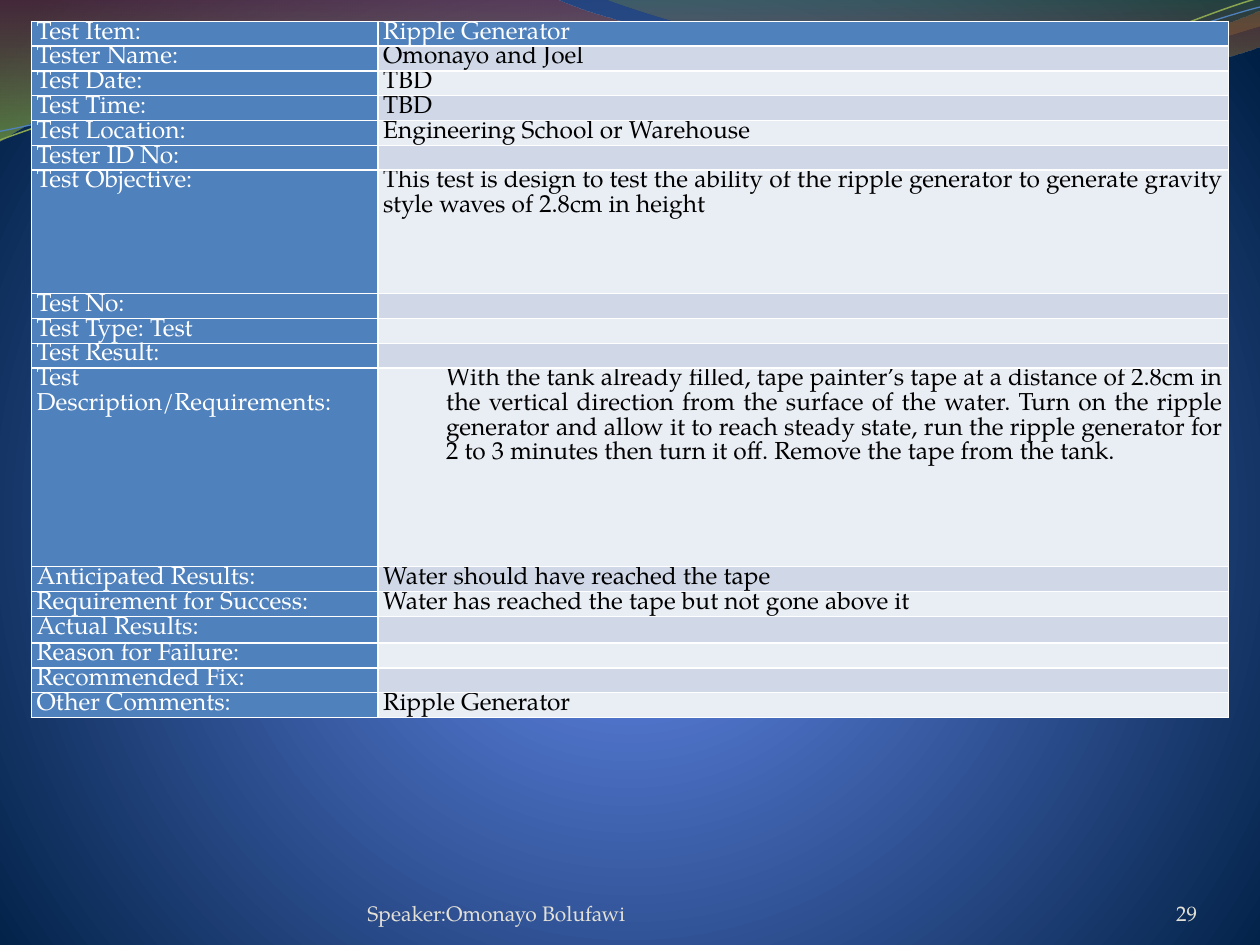
from dataclasses import dataclass

from lxml import etree
from pptx import Presentation
from pptx import util as u
from pptx.dml.color import RGBColor
from pptx.enum import text
from pptx.oxml import ns

Pt = u.Pt
ALIGN, ANCHOR = text.PP_ALIGN, text.MSO_ANCHOR


@dataclass(frozen=True)
class Theme:
    font: str = "TeX Gyre Pagella"
    table_size: float = 14
    blank_size: float = 10
    footer_size: float = 12
    line_pitch: float = 14.1
    label: str = "4F81BD"
    bands: tuple = ("E9EDF4", "D0D8E8")
    white: str = "FFFFFF"
    ink: str = "000000"
    footer: str = "E3E1D7"
    green_line: str = "89A54F"
    backdrop: tuple = ((0, "4D75D6", 100), (25, "4E72C7", 100), (100, "001F44", 100))
    back_wave: tuple = ((0, "973330", 45), (100, "95C238", 55))
    front_wave: tuple = ((0, "769537", 30), (80, "BE3330", 45))


def add_node(parent, tag, **attributes):
    node = etree.SubElement(parent, ns.qn(tag))
    for key, value in attributes.items():
        node.set(key, str(value))
    return node


def make_gradient(parent, stops, circle=None):
    """Swap the solid fill in parent for a vertical or circular gradient."""
    solid = parent.find(ns.qn("a:solidFill"))
    gradient = add_node(parent, "a:gradFill", rotWithShape=1)
    stop_list = add_node(gradient, "a:gsLst")
    for position, color, opacity in stops:
        stop = add_node(stop_list, "a:gs", pos=position * 1000)
        add_node(add_node(stop, "a:srgbClr", val=color), "a:alpha", val=opacity * 1000)
    if circle:
        center = add_node(gradient, "a:path", path="circle")
        add_node(center, "a:fillToRect",
                 **{side: percent * 1000 for side, percent in zip("ltrb", circle)})
    else:
        add_node(gradient, "a:lin", ang=5400000, scaled=0)
    parent.replace(solid, gradient)


def bend(shape, segments):
    """Merge the three straight steps of each six-number segment into one cubic curve."""
    steps = iter(list(shape._element.iter(ns.qn("a:lnTo"))))
    for segment in segments:
        group = [next(steps) for _ in range(len(segment) // 2)]
        if len(group) == 3:
            outline = group[0].getparent()
            curve = add_node(outline, "a:cubicBezTo")
            outline.replace(group[0], curve)
            for step in group:
                curve.append(step[0])
            for step in group[1:]:
                outline.remove(step)


def write(paragraph, words, *, size, color, font, align=ALIGN.LEFT, pitch=None, indent=0):
    paragraph.alignment = align
    if pitch:
        paragraph.line_spacing = Pt(pitch)
    if indent:
        paragraph._p.get_or_add_pPr().set("marL", str(Pt(indent)))
    run = paragraph.add_run()
    run.text = words
    run.font.size, run.font.name = Pt(size), font
    run.font.color.rgb = RGBColor.from_string(color)


class SlideBuilder:
    def __init__(self, slide, theme):
        self.slide, self.theme = slide, theme

    def background(self):
        self.slide.background.fill.solid()
        holder = self.slide._element.find(".//" + ns.qn("p:bgPr"))
        make_gradient(holder, self.theme.backdrop, circle=(10, 110, 10, 100))

    def wave(self, start, segments, stops=None, line=None, width=0.75):
        """Outline of lines (x, y) and cubic curves (three x, y pairs)."""
        points = [(Pt(segment[i]), Pt(segment[i + 1]))
                  for segment in segments for i in range(0, len(segment), 2)]
        builder = self.slide.shapes.build_freeform(Pt(start[0]), Pt(start[1]))
        builder.add_line_segments(points, close=bool(stops))
        shape = builder.convert_to_shape()
        bend(shape, segments)
        shape.shadow.inherit = False
        if stops:
            shape.fill.solid()
            make_gradient(shape._element.spPr, stops)
        else:
            shape.fill.background()
        if line:
            shape.line.color.rgb = RGBColor.from_string(line)
            shape.line.width = Pt(width)
        else:
            shape.line.fill.background()

    def footer(self, words, left, width, align=ALIGN.LEFT):
        frame = self.slide.shapes.add_textbox(Pt(left), Pt(500.4), Pt(width), Pt(28.8)).text_frame
        frame.word_wrap = True
        frame.vertical_anchor = ANCHOR.BOTTOM
        frame.margin_left = frame.margin_right = frame.margin_top = frame.margin_bottom = 0
        write(frame.paragraphs[0], words, size=self.theme.footer_size,
              color=self.theme.footer, font=self.theme.font, align=align)

    def cell(self, cell, words, fill, color, indent=0):
        theme = self.theme
        cell.margin_left = cell.margin_right = Pt(3)
        cell.margin_top = cell.margin_bottom = 0
        cell.fill.solid()
        cell.fill.fore_color.rgb = RGBColor.from_string(fill)
        paragraph = cell.text_frame.paragraphs[0]
        if words:
            write(paragraph, words, size=theme.table_size, color=color, font=theme.font,
                  align=ALIGN.JUSTIFY, pitch=theme.line_pitch, indent=indent)
        else:
            add_node(paragraph._p, "a:endParaRPr", sz=int(theme.blank_size * 100))
        properties = cell._tc.get_or_add_tcPr()
        for place, side in enumerate("LRTB"):
            border = add_node(properties, f"a:ln{side}", w=Pt(1))
            add_node(add_node(border, "a:solidFill"), "a:srgbClr", val=theme.white)
            properties.insert(place, border)

    def form(self, entries, heights, indents, left, top, widths, usual_height):
        """Two-column form: labels on the left, banded answers on the right."""
        theme = self.theme
        row_heights = [heights.get(label, usual_height) for label, _ in entries]
        table = self.slide.shapes.add_table(len(entries), 2, Pt(left), Pt(top),
                                            Pt(sum(widths)), Pt(sum(row_heights))).table
        table.first_row = table.horz_banding = False
        for column, width in zip(table.columns, widths):
            column.width = Pt(width)
        for index, (label, answer) in enumerate(entries):
            table.rows[index].height = Pt(row_heights[index])
            heading = index == 0
            self.cell(table.cell(index, 0), label, theme.label, theme.white)
            self.cell(table.cell(index, 1), answer,
                      theme.label if heading else theme.bands[index % 2],
                      theme.white if heading else theme.ink, indents.get(label, 0))


ENTRIES = [
    ("Test Item:", "Ripple Generator"),
    ("Tester Name:", "Omonayo and Joel"),
    ("Test Date:", "TBD"),
    ("Test Time:", "TBD"),
    ("Test Location:", "Engineering School or Warehouse"),
    ("Tester ID No:", ""),
    ("Test Objective:", "This test is design to test the ability of the ripple generator "
                        "to generate gravity style waves of 2.8cm in height"),
    ("Test No:", ""),
    ("Test Type: Test", ""),
    ("Test Result:", ""),
    ("Test Description/Requirements:",
     "With the tank already filled, tape painter’s tape at a distance of 2.8cm in the vertical "
     "direction from the surface of the water. Turn on the ripple generator and allow it to "
     "reach steady state, run the ripple generator for 2 to 3 minutes then turn it off. "
     "Remove the tape from the tank."),
    ("Anticipated Results:", "Water should have reached the tape"),
    ("Requirement for Success:", "Water has reached the tape but not gone above it"),
    ("Actual Results:", ""),
    ("Reason for Failure:", ""),
    ("Recommended Fix:", ""),
    ("Other Comments:", "Ripple Generator"),
]
HEIGHTS = {"Test Objective:": 70.6, "Test Description/Requirements:": 113.5,
           "Actual Results:": 15.3}
INDENTS = {"Test Description/Requirements:": 36}


def main():
    deck = Presentation()
    deck.slide_width, deck.slide_height = Pt(720), Pt(540)
    theme = Theme()
    page = SlideBuilder(deck.slides.add_slide(deck.slide_layouts[6]), theme)
    page.background()
    page.wave((0, 0), [(317, -1), (343, 12, 478, 45, 546, 45), (614, 45, 690, 19, 720, 6),
                       (721, 26), (708, 32, 626, 55, 537, 54), (448, 54, 275, 20, 185, 24),
                       (93, 26, 33, 60, -1, 81)], stops=theme.back_wave)
    page.wave((345, -1), [(366, 8, 491, 45, 554, 47), (616, 50, 692, 23, 720, 15), (720, 0)],
              stops=theme.front_wave)
    page.wave((0, 80), [(35, 67, 114, 41, 199, 37), (284, 34, 427, 64, 513, 58),
                        (600, 51, 675, 11, 719, -1)], line=theme.green_line, width=0.85)
    page.wave((0, 75), [(34, 69, 118, 44, 204, 40), (290, 37, 430, 60, 516, 54),
                        (602, 48, 676, 15, 720, 4)], line=theme.label)
    page.footer("Speaker:Omonayo Bolufawi", 210, 264)
    page.footer("29", 624, 60, ALIGN.RIGHT)
    page.form(ENTRIES, HEIGHTS, INDENTS, left=18, top=12.2, widths=(198, 486), usual_height=14.2)
    deck.save("out.pptx")


if __name__ == "__main__":
    main()
